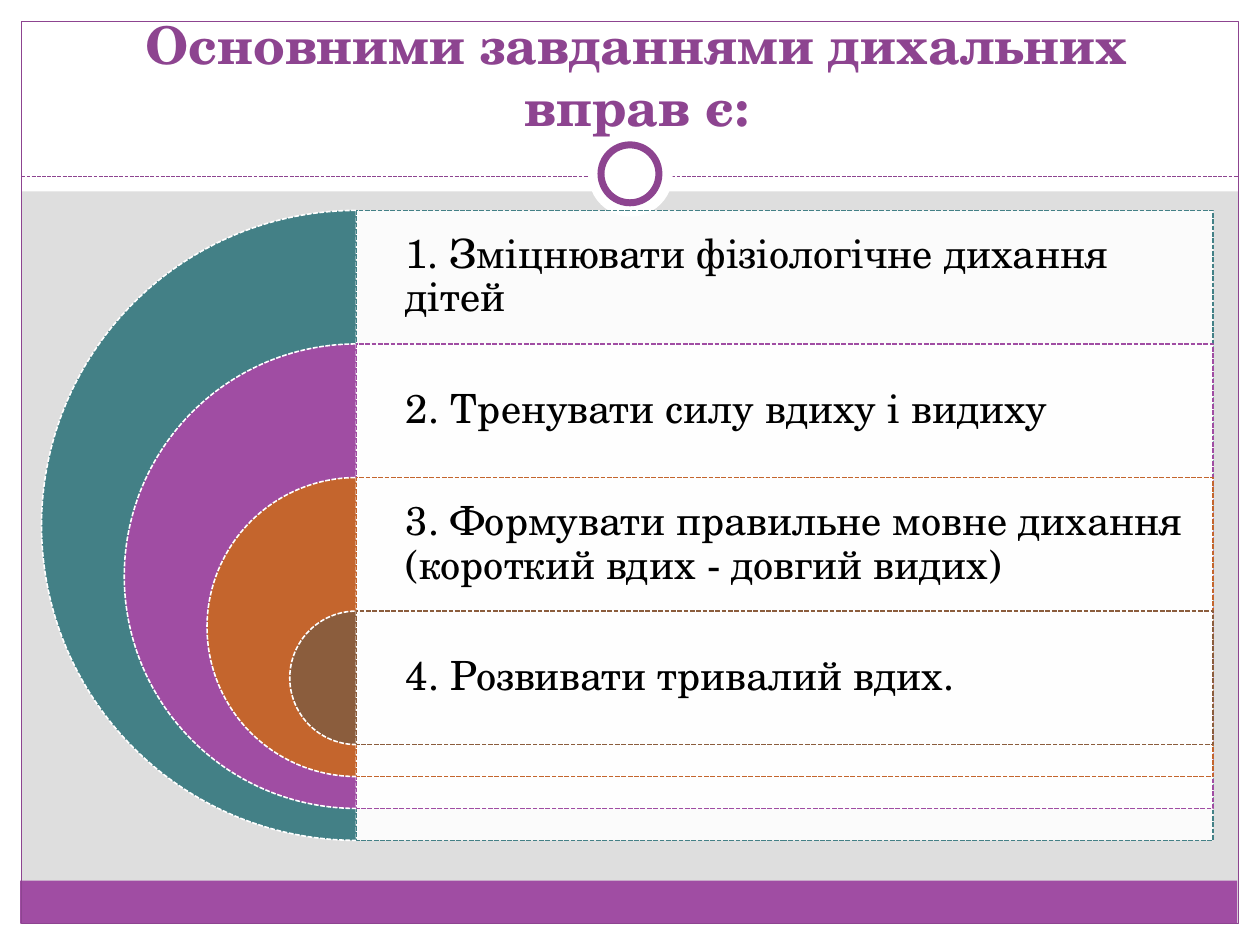
from lxml import etree
from pptx import Presentation
from pptx import util as u
from pptx.dml.color import RGBColor
from pptx.enum import dml, shapes, text
from pptx.oxml import ns

WHITE = RGBColor(0xFF, 0xFF, 0xFF)
BLACK = RGBColor(0x00, 0x00, 0x00)
GREY = RGBColor(0xDE, 0xDE, 0xDE)
PURPLE = RGBColor(0xA0, 0x4D, 0xA3)
DARK_PURPLE = RGBColor(0x8D, 0x44, 0x90)
TEAL = RGBColor(0x43, 0x80, 0x86)
ORANGE = RGBColor(0xC4, 0x65, 0x2D)
BROWN = RGBColor(0x8B, 0x5D, 0x3D)

FONT = "TeX Gyre Schola"
DASH = dml.MSO_LINE.SQUARE_DOT
KIND = shapes.MSO_SHAPE

TITLE = "Основними завданнями дихальних вправ є:"
TASKS = [
    ("1. Зміцнювати фізіологічне дихання дітей", TEAL),
    ("2. Тренувати силу вдиху і видиху", PURPLE),
    ("3. Формувати правильне мовне дихання (короткий вдих - довгий видих)", ORANGE),
    ("4. Розвивати тривалий вдих.", BROWN),
]


def apply(target, values):
    for name, value in values.items():
        setattr(target, name, value)


def inches(*lengths):
    return [u.Inches(length) for length in lengths]


class SlideBuilder:
    """Draws styled elements on one page; target is the page or a group."""

    def __init__(self, page):
        self.page = page
        self.target = page.shapes

    def background(self, color):
        self.page.background.fill.solid()
        self.page.background.fill.fore_color.rgb = color

    def outline(self, line, color, width, dash=None):
        line.color.rgb = color
        apply(line, {"width": u.Pt(width), "dash_style": dash})

    def shape(self, kind, at, fill=None, line=None, opacity=100):
        shape = self.target.add_shape(kind, *inches(*at))
        shape.shadow.inherit = False
        if fill is None:
            shape.fill.background()
        else:
            shape.fill.solid()
            shape.fill.fore_color.rgb = fill
        if opacity < 100:
            color = shape.element.spPr.find(".//" + ns.qn("a:srgbClr"))
            etree.SubElement(color, ns.qn("a:alpha"), val=str(opacity * 1000))
        if line is None:
            shape.line.fill.background()
        else:
            self.outline(shape.line, *line)
        return shape

    def connector(self, start, end, line):
        rule = self.target.add_connector(
            shapes.MSO_CONNECTOR.STRAIGHT, *inches(*start, *end))
        self.outline(rule.line, *line)
        etree.SubElement(rule.element.spPr, ns.qn("a:effectLst"))

    def set_text(self, frame, words, frame_values, para_values, font_values, color):
        apply(frame, {"word_wrap": True, "auto_size": text.MSO_AUTO_SIZE.NONE,
                      **frame_values})
        para = frame.paragraphs[0]
        apply(para, para_values)
        span = para.add_run()
        span.text = words
        apply(span.font, {"name": FONT, **font_values})
        span.font.color.rgb = color

    def title(self, words, at):
        title = self.page.shapes.title
        apply(title, dict(zip(("left", "top", "width", "height"), inches(*at))))
        self.set_text(title.text_frame, words,
                      {"vertical_anchor": text.MSO_ANCHOR.BOTTOM},
                      {"alignment": text.PP_ALIGN.CENTER},
                      {"size": u.Pt(29.7), "bold": True}, DARK_PURPLE)
        # The title lies above the frame drawn so far.
        self.page.shapes.element.append(title.element)

    def label(self, words, at):
        box = self.target.add_textbox(*inches(*at))
        margins = {"margin_" + side: u.Inches(0.1)
                   for side in ("top", "right", "bottom")}
        self.set_text(box.text_frame, words,
                      {"vertical_anchor": text.MSO_ANCHOR.MIDDLE,
                       "margin_left": u.Inches(0.39), **margins},
                      {"alignment": text.PP_ALIGN.LEFT, "line_spacing": 0.9,
                       "space_after": u.Pt(8)},
                      {"size": u.Pt(23)}, BLACK)


def draw_frame(builder):
    for at in ((0, 7.33, 10, 0.17), (0, 0, 10, 1.52),
               (0, 0, 0.17, 7.5), (9.83, 0, 0.17, 7.5)):
        builder.shape(KIND.RECTANGLE, at, WHITE)
    builder.shape(KIND.RECTANGLE, (0.16, 6.99, 9.66, 0.34), PURPLE)
    builder.shape(KIND.RECTANGLE, (0.17, 0.17, 9.66, 7.16),
                  line=(DARK_PURPLE, 0.75))
    builder.connector((0.17, 1.4), (9.83, 1.4), (DARK_PURPLE, 0.75, DASH))
    builder.shape(KIND.OVAL, (4.67, 1.05, 0.67, 0.67), WHITE)
    builder.shape(KIND.OVAL, (4.77, 1.15, 0.46, 0.46), WHITE, (DARK_PURPLE, 4))


def draw_tasks(builder):
    """Nested half discs, each with a panel as tall as the disc."""
    left, top, width, largest = 2.83, 1.67, 6.8, 5
    row = 1.06
    shrink = (largest - row) / (len(TASKS) - 1)
    builder.target = builder.page.shapes.add_group_shape().shapes
    for index, (words, color) in enumerate(TASKS):
        size = largest - index * shrink
        y = top + index * row
        disc = builder.shape(KIND.PIE, (left - size / 2, y, size, size),
                             color, (WHITE, 0.9, DASH))
        disc.adjustments[0], disc.adjustments[1] = 54, 162
        builder.shape(KIND.RECTANGLE, (left, y, width, size), WHITE,
                      (color, 0.9, DASH), opacity=90)
        builder.label(words, (left, y, width, row))


def main():
    deck = Presentation()
    deck.slide_width, deck.slide_height = inches(10, 7.5)
    builder = SlideBuilder(deck.slides.add_slide(deck.slide_layouts[5]))
    builder.background(GREY)
    draw_frame(builder)
    builder.title(TITLE, (0.39, 0.31, 9.33, 0.83))
    draw_tasks(builder)
    deck.save("out.pptx")


if __name__ == "__main__":
    main()
